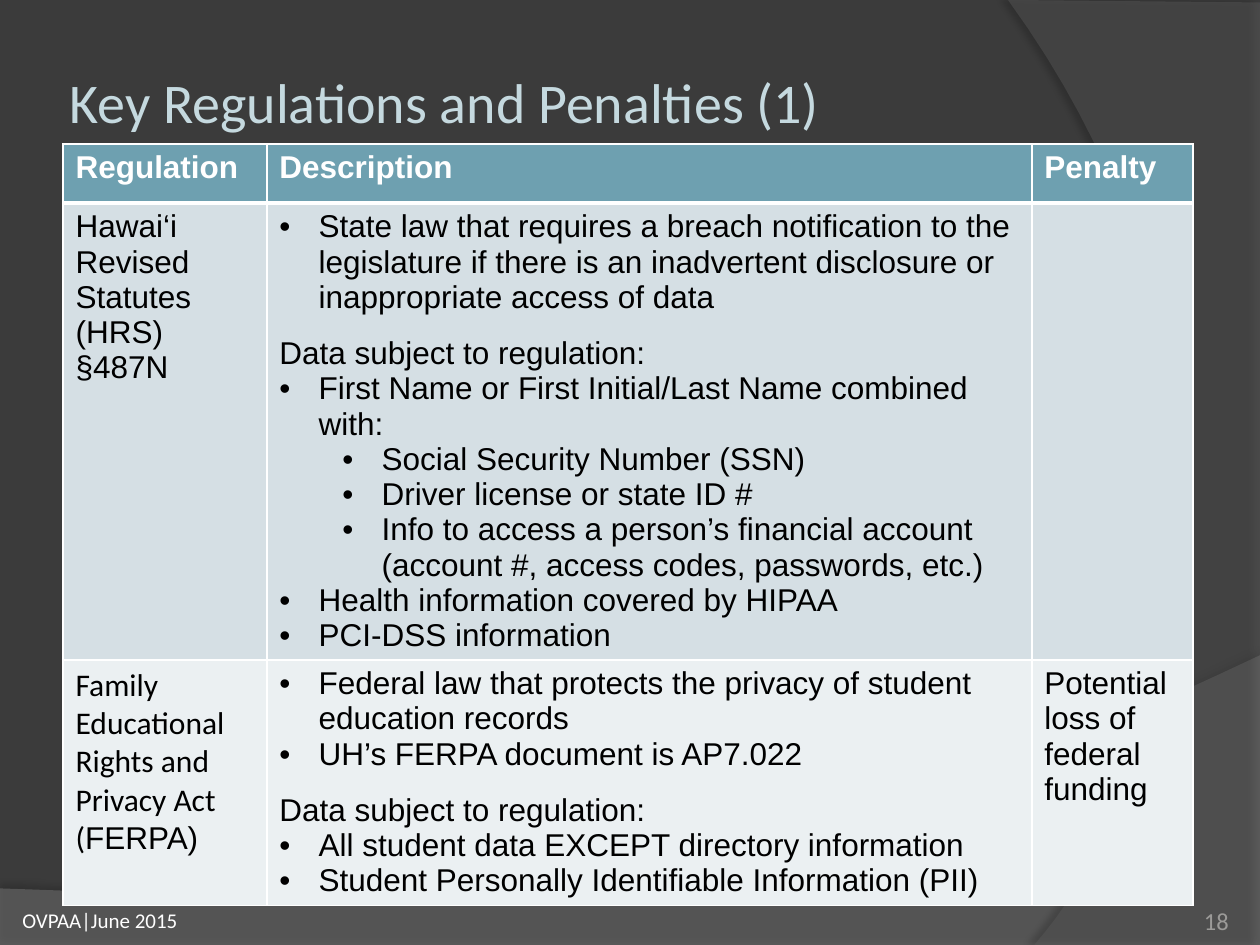
from lxml.etree import SubElement
from pptx import Presentation
from pptx.dml.color import RGBColor
from pptx.enum.text import MSO_ANCHOR, PP_ALIGN
from pptx.oxml.ns import qn
from pptx.util import Cm, Pt

WHITE = RGBColor(0xFF, 0xFF, 0xFF)
BLACK = RGBColor(0, 0, 0)
BACK = RGBColor(0x3B, 0x3B, 0x3B)
WAVE = RGBColor(0x7F, 0x7F, 0x7F)
ARC = RGBColor(0x5E, 0x5E, 0x5E)
PALE = RGBColor(0xC5, 0xD9, 0xDF)
GREY = RGBColor(0x9B, 0x9A, 0x98)
TEAL = RGBColor(0x6E, 0xA0, 0xB0)
MIST = RGBColor(0xD5, 0xDF, 0xE4)
ICE = RGBColor(0xEB, 0xF0, 0xF2)

TITLE = "Key Regulations and Penalties (1)"
FOOT = "OVPAA|June 2015"
PAGE = "18"
HEADS = ["Regulation", "Description", "Penalty"]
LEAD = "Data subject to regulation:"

# Each line is a kind (plain, lead, item, sub) and its text.
ROWS = [
    ([("plain", "Hawai‘i Revised Statutes (HRS) §487N")],
     [("item", "State law that requires a breach notification to the legislature "
               "if there is an inadvertent disclosure or inappropriate access of data"),
      ("lead", LEAD),
      ("item", "First Name or First Initial/Last Name combined with:"),
      ("sub", "Social Security Number (SSN)"),
      ("sub", "Driver license or state ID #"),
      ("sub", "Info to access a person’s financial account "
              "(account #, access codes, passwords, etc.)"),
      ("item", "Health information covered by HIPAA"),
      ("item", "PCI-DSS information")],
     []),
    ([("plain", [("Family Educational Rights and Privacy Act (", "Calibri"),
                 ("FERPA)", "Arial")])],
     [("item", "Federal law that protects the privacy of student education records"),
      ("item", "UH’s FERPA document is AP7.022"),
      ("lead", LEAD),
      ("item", "All student data EXCEPT directory information"),
      ("item", "Student Personally Identifiable Information (PII)")],
     [("plain", "Potential loss of federal funding")]),
]
KINDS = {"plain": {}, "lead": {"gap": 12}, "item": {"left": 0.79},
         "sub": {"left": 2.06, "level": 1}}
HANG = 0.79
COLS = [4.11, 15.42, 3.25]
HIGH = [1.19, 9.21, 4.95]

# Corners, then the four points of the closing curve, in centimetres.
SHAPES = [
    ([(0, 17.91), (0, 19.08), (25.4, 19.08)],
     [(25.4, 13.21), (14.2, 18.52), (9.93, 18.26), (0, 17.91)],
     WAVE, 45, (35, 3.5, 270)),
    ([(25.4, 0.05), (25.4, 19.05)],
     [(20.85, 19.05), (23.75, 15.72), (25.86, 7.62), (20.32, 0)],
     ARC, 40, (45, 4, 180)),
]


def write(frame, text, first=True, font="Calibri", size=18, color=BLACK,
          bold=False, align=None, gap=0, left=None, level=0):
    para = frame.paragraphs[0] if first else frame.add_paragraph()
    para.level = level
    para.space_before = Pt(gap)
    if align is not None:
        para.alignment = align
    if left is not None:
        props = para._p.get_or_add_pPr()
        props.set("marL", str(Cm(left)))
        props.set("indent", str(-Cm(HANG)))
        SubElement(props, qn("a:buFont"), typeface="Arial")
        SubElement(props, qn("a:buChar"), char="•")
    for words, face in [(text, font)] if isinstance(text, str) else text:
        run = para.add_run()
        run.text = words
        run.font.name = face
        run.font.size = Pt(size)
        run.font.bold = bold
        run.font.color.rgb = color


def curve(points, steps=40):
    for step in range(steps + 1):
        t = step / steps
        parts = [(1 - t) ** 3, 3 * t * (1 - t) ** 2, 3 * t * t * (1 - t), t ** 3]
        yield tuple(sum(w * p[axis] for w, p in zip(parts, points)) for axis in (0, 1))


def draw(slide, edge, bend, color, alpha, shade):
    points = [(Cm(x), Cm(y)) for x, y in edge + list(curve(bend))]
    pen = slide.shapes.build_freeform(*points[0])
    pen.add_line_segments(points[1:], close=True)
    shape = pen.convert_to_shape()
    shape.line.fill.background()
    shape.fill.solid()
    shape.fill.fore_color.rgb = color
    tone = shape._element.spPr.find(qn("a:solidFill"))[0]
    SubElement(tone, qn("a:alpha"), val=str(alpha * 1000))
    shape.shadow.inherit = False
    dark, far, angle = shade
    effect = shape._element.spPr.find(qn("a:effectLst"))
    cast = SubElement(effect, qn("a:outerShdw"), blurRad=str(Pt(4)), dist=str(Pt(far)),
                      dir=str(angle * 60000), algn="ctr", rotWithShape="0")
    tone = SubElement(cast, qn("a:srgbClr"), val=str(BLACK))
    SubElement(tone, qn("a:alpha"), val=str(dark * 1000))


def label(slide, text, box, anchor, inset=None, **style):
    frame = slide.shapes.add_textbox(*map(Cm, box)).text_frame
    frame.word_wrap = True
    frame.vertical_anchor = anchor
    if inset is not None:
        frame.margin_left = frame.margin_right = Cm(inset)
        frame.margin_top = frame.margin_bottom = Cm(inset)
    write(frame, text, **style)


def paint(cell, color, top, base):
    props = cell._tc.get_or_add_tcPr()
    for side, width in (("L", 1), ("R", 1), ("T", top), ("B", base)):
        line = SubElement(props, qn("a:ln" + side), w=str(Pt(width)))
        fill = SubElement(line, qn("a:solidFill"))
        SubElement(fill, qn("a:srgbClr"), val=str(WHITE))
    cell.fill.solid()
    cell.fill.fore_color.rgb = color


def fill_table(slide):
    table = slide.shapes.add_table(len(HIGH), len(COLS), Cm(1.27), Cm(2.9),
                                   Cm(sum(COLS)), Cm(sum(HIGH))).table
    table.horz_banding = False
    for col, width in zip(table.columns, COLS):
        col.width = Cm(width)
    for row, height in zip(table.rows, HIGH):
        row.height = Cm(height)
    for i, head in enumerate(HEADS):
        cell = table.cell(0, i)
        paint(cell, TEAL, 1, 3)
        write(cell.text_frame, head, font="Arial", color=WHITE, bold=True)
    for r, (row, color) in enumerate(zip(ROWS, (MIST, ICE)), 1):
        for c, lines in enumerate(row):
            cell = table.cell(r, c)
            paint(cell, color, 3 if r == 1 else 1, 1)
            for n, (kind, text) in enumerate(lines):
                write(cell.text_frame, text, first=n == 0, font="Arial", **KINDS[kind])


def main():
    deck = Presentation()
    deck.slide_width, deck.slide_height = Cm(25.4), Cm(19.05)
    slide = deck.slides.add_slide(deck.slide_layouts[5])
    slide.background.fill.solid()
    slide.background.fill.fore_color.rgb = BACK
    for parts in SHAPES:
        draw(slide, *parts)
    label(slide, FOOT, (0.2, 18.03, 5.92, 1.02), MSO_ANCHOR.MIDDLE, size=12, color=WHITE)
    title = slide.shapes.title
    slide.shapes._spTree.append(title._element)
    title.left, title.top, title.width, title.height = map(Cm, (1.27, 0.76, 20.75, 2.57))
    frame = title.text_frame
    frame.vertical_anchor = MSO_ANCHOR.MIDDLE
    frame.margin_left = frame.margin_right = Cm(0.13)
    frame.margin_top = frame.margin_bottom = Cm(0.13)
    write(frame, TITLE, size=32, color=PALE, align=PP_ALIGN.LEFT)
    fill_table(slide)
    label(slide, PAGE, (22.66, 17.83, 2.11, 1.02), MSO_ANCHOR.BOTTOM, inset=0,
          size=14, color=GREY, align=PP_ALIGN.RIGHT)
    deck.save("out.pptx")


if __name__ == "__main__":
    main()
